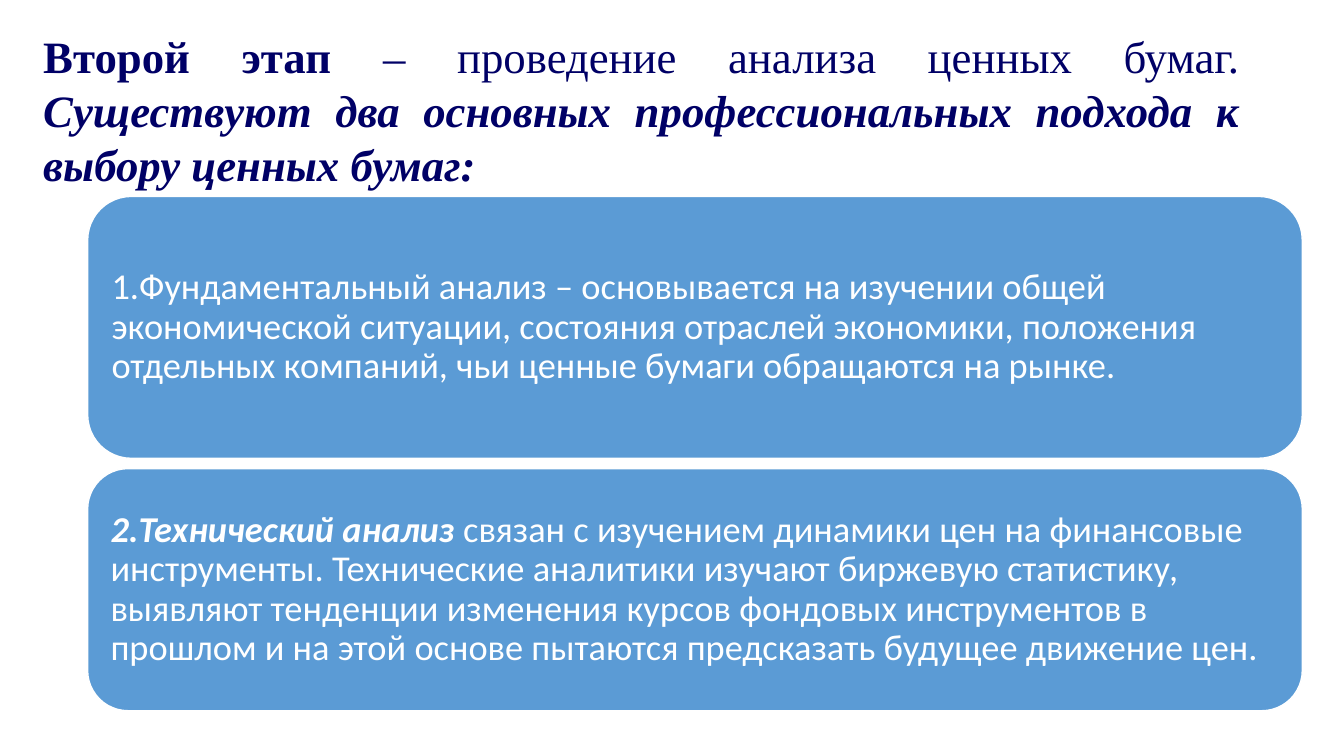
"""Build a slide on two approaches to choosing securities."""
from dataclasses import dataclass

from pptx import Presentation
from pptx import util as u
from pptx.dml.color import RGBColor
from pptx.enum import shapes, text


@dataclass(frozen=True)
class Theme:
    """Colours, fonts and type sizes."""
    navy: RGBColor = RGBColor(0x00, 0x00, 0x66)
    blue: RGBColor = RGBColor(0x5B, 0x9B, 0xD5)
    white: RGBColor = RGBColor(0xFF, 0xFF, 0xFF)
    serif: str = "Times New Roman"
    sans: str = "Calibri"
    head: int = 32
    body: int = 26


@dataclass(frozen=True)
class Run:
    """A piece of text with its emphasis."""
    words: str
    bold: bool = False
    slant: bool = False


@dataclass(frozen=True)
class Card:
    """A rounded panel placed in centimetres."""
    top: float
    height: float
    runs: tuple[Run, ...]


LOOK = Theme()
LEFT, WIDTH = 2.21, 30.61
TITLE = (
    Run("Второй этап", bold=True),
    Run(" – проведение анализа ценных бумаг. "),
    Run("Существуют два основных профессиональных подхода к выбору ценных бумаг:",
        bold=True, slant=True),
)
CARDS = (
    Card(4.95, 6.6, (
        Run("1.Фундаментальный анализ – основывается на изучении общей "
            "экономической ситуации, состояния отраслей экономики, положения "
            "отдельных компаний, чьи ценные бумаги обращаются на рынке."),
    )),
    Card(11.81, 6.1, (
        Run("2.Технический анализ", bold=True, slant=True),
        Run(" связан с изучением динамики цен на финансовые инструменты. "
            "Технические аналитики изучают биржевую статистику, выявляют "
            "тенденции изменения курсов фондовых инструментов в прошлом и на "
            "этой основе пытаются предсказать будущее движение цен."),
    )),
)


def assign(item, values: dict) -> None:
    """Set each named attribute on an item."""
    for name, value in values.items():
        setattr(item, name, value)


def write(para, runs: tuple[Run, ...], face: str, size: int, tint: RGBColor) -> None:
    """Add styled runs to a paragraph."""
    for part in runs:
        run = para.add_run()
        run.text = part.words
        assign(run.font, {"name": face, "size": u.Pt(size),
                          "bold": part.bold, "italic": part.slant})
        run.font.color.rgb = tint


def draw_title(slide) -> None:
    """Draw the justified heading."""
    box = slide.shapes.add_textbox(u.Cm(0.84), u.Cm(0.61), u.Cm(30.66), u.Cm(4.37))
    box.text_frame.word_wrap = True
    para = box.text_frame.paragraphs[0]
    para.alignment = text.PP_ALIGN.JUSTIFY
    write(para, TITLE, LOOK.serif, LOOK.head, LOOK.navy)


def draw_card(slide, card: Card) -> None:
    """Draw one rounded panel with its text."""
    panel = slide.shapes.add_shape(
        shapes.MSO_SHAPE.ROUNDED_RECTANGLE,
        u.Cm(LEFT), u.Cm(card.top), u.Cm(WIDTH), u.Cm(card.height))
    panel.shadow.inherit = False
    panel.fill.solid()
    panel.fill.fore_color.rgb = LOOK.blue
    panel.line.color.rgb = LOOK.white
    panel.line.width = u.Pt(1)
    frame = panel.text_frame
    sides = ("left", "top", "right", "bottom")
    assign(frame, {f"margin_{side}": u.Cm(0.28) for side in sides})
    assign(frame, {"word_wrap": True, "vertical_anchor": text.MSO_ANCHOR.MIDDLE})
    para = frame.paragraphs[0]
    assign(para, {"alignment": text.PP_ALIGN.LEFT, "line_spacing": 0.9})
    write(para, card.runs, LOOK.sans, LOOK.body, LOOK.white)


def main() -> None:
    """Build and save the deck."""
    deck = Presentation()
    assign(deck, {"slide_width": u.Cm(33.87), "slide_height": u.Cm(19.05)})
    slide = deck.slides.add_slide(deck.slide_layouts[6])
    draw_title(slide)
    for card in CARDS:
        draw_card(slide, card)
    deck.save("out.pptx")


if __name__ == "__main__":
    main()
